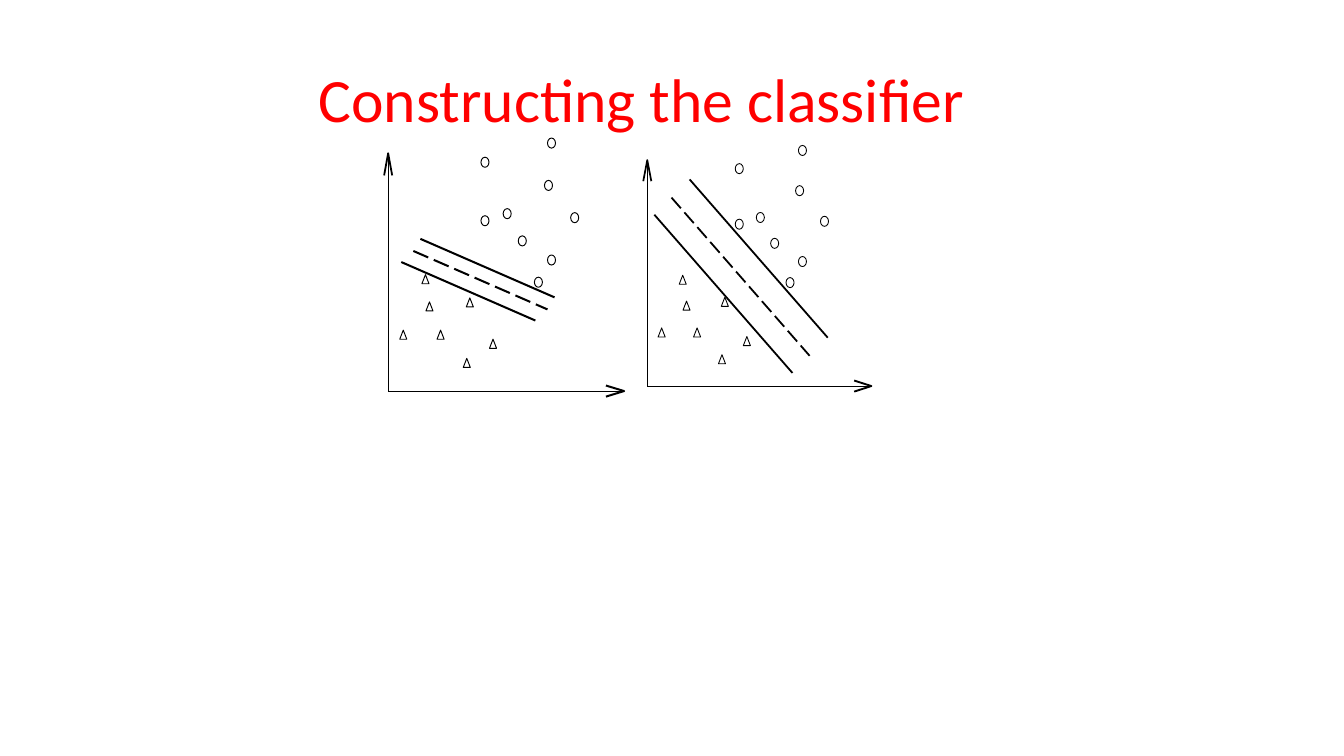
import pptx
import pptx.dml.color
import pptx.enum.dml
import pptx.enum.shapes
import pptx.enum.text
import pptx.oxml
import pptx.util

Inches = pptx.util.Inches
Pt = pptx.util.Pt
SHAPES = pptx.enum.shapes.MSO_SHAPE

RED = pptx.dml.color.RGBColor(0xFF, 0x00, 0x00)
BLACK = pptx.dml.color.RGBColor(0x00, 0x00, 0x00)

# Marker centres in inches, right of and above the origin of a full-size plot
CIRCLES = [(0.96, 1.69), (0.96, 2.27), (1.18, 1.76), (1.33, 1.49), (1.62, 1.3),
           (1.59, 2.04), (1.85, 1.72), (1.62, 2.46), (1.49, 1.08)]
TRIANGLES = [(0.81, 0.88), (0.37, 1.11), (1.04, 0.47), (0.41, 0.84),
             (0.52, 0.56), (0.78, 0.28), (0.15, 0.56)]
CIRCLE_SIZE = (0.08, 0.1)
TRIANGLE_SIZE = (0.07, 0.09)
AXIS_SIZE = (2.34, 2.36)

# Margin lines: starts of upper edge, separator and lower edge, then their run and drop
NARROW_MARGIN = ([(0.32, 1.51), (0.25, 1.39), (0.13, 1.28)], (1.33, 0.58))
WIDE_MARGIN = ([(0.42, 2.05), (0.24, 1.87), (0.07, 1.7)], (1.37, 1.57))


def add_title(slide, left, top, width, height):
    title = slide.shapes.title
    title.left, title.top = Inches(left), Inches(top)
    title.width, title.height = Inches(width), Inches(height)
    frame = title.text_frame
    frame.text = "Constructing the classifier"
    frame.word_wrap = True
    frame.auto_size = pptx.enum.text.MSO_AUTO_SIZE.SHAPE_TO_FIT_TEXT
    frame.vertical_anchor = pptx.enum.text.MSO_ANCHOR.TOP
    paragraph = frame.paragraphs[0]
    paragraph.alignment = pptx.enum.text.PP_ALIGN.CENTER
    font = paragraph.runs[0].font
    font.name = "Calibri"
    font.size = Pt(44)
    font.color.rgb = RED


def format_outline(shape, weight):
    shape.shadow.inherit = False
    shape.fill.background()
    shape.line.color.rgb = BLACK
    shape.line.width = Pt(weight)


def add_line(slide, start, end, weight):
    line = slide.shapes.add_connector(
        pptx.enum.shapes.MSO_CONNECTOR.STRAIGHT,
        *(Inches(length) for length in (*start, *end)))
    line.line.color.rgb = BLACK
    line.line.width = Pt(weight)
    properties = line._element.spPr
    properties.append(pptx.oxml.parse_xml(
        '<a:effectLst xmlns:a="http://schemas.openxmlformats.org/drawingml/2006/main"/>'))
    return line


def add_arrowhead(slide, points, weight):
    corners = [(Inches(x), Inches(y)) for x, y in points]
    builder = slide.shapes.build_freeform(*corners[0])
    builder.add_line_segments(corners[1:], close=False)
    format_outline(builder.convert_to_shape(), weight)


def add_axes(slide, left, base, width, height, scale):
    right, top = left + width, base - height
    add_line(slide, (left, base), (right, base), 0.73 * scale)
    add_line(slide, (left, base), (left, top), 0.62 * scale)
    length, half = 0.18 * scale, 0.055
    add_arrowhead(slide, [(right - length, base + half), (right, base),
                          (right - length, base - half)], 1.41 * scale)
    length, half = 0.22 * scale, 0.04
    add_arrowhead(slide, [(left + half, top + length), (left, top),
                          (left - half, top + length)], 1.28 * scale)


def add_markers(slide, kind, centres, size, left, base, scale):
    width, height = size
    for x, y in centres:
        marker = slide.shapes.add_shape(
            kind,
            Inches(left + x * scale - width / 2),
            Inches(base - y * scale - height / 2),
            Inches(width), Inches(height))
        format_outline(marker, 0.67 * scale)


def add_margin(slide, margin, left, base, weight):
    """Draw the two margin edges and the dashed separator between them."""
    starts, (run, drop) = margin
    upper, separator, lower = [
        add_line(slide, (left + x, base - y), (left + x + run, base - y + drop), weight)
        for x, y in starts]
    separator.line.dash_style = pptx.enum.dml.MSO_LINE.LONG_DASH


def add_plot(slide, left, base, scale, margin, margin_weight):
    width, height = (length * scale for length in AXIS_SIZE)
    add_markers(slide, SHAPES.OVAL, CIRCLES, CIRCLE_SIZE, left, base, scale)
    add_markers(slide, SHAPES.ISOSCELES_TRIANGLE, TRIANGLES, TRIANGLE_SIZE,
                left, base, scale)
    add_axes(slide, left, base, width, height, scale)
    add_margin(slide, margin, left, base, margin_weight)


def main():
    presentation = pptx.Presentation()
    presentation.slide_width = Inches(13.33)
    presentation.slide_height = Inches(7.5)
    slide = presentation.slides.add_slide(presentation.slide_layouts[5])
    add_title(slide, 1.65, 0.55, 9.43, 0.84)
    add_plot(slide, 3.85, 3.88, 1, NARROW_MARGIN, 1.44)
    add_plot(slide, 6.42, 3.83, 0.95, WIDE_MARGIN, 1.28)
    presentation.save("out.pptx")


if __name__ == "__main__":
    main()
